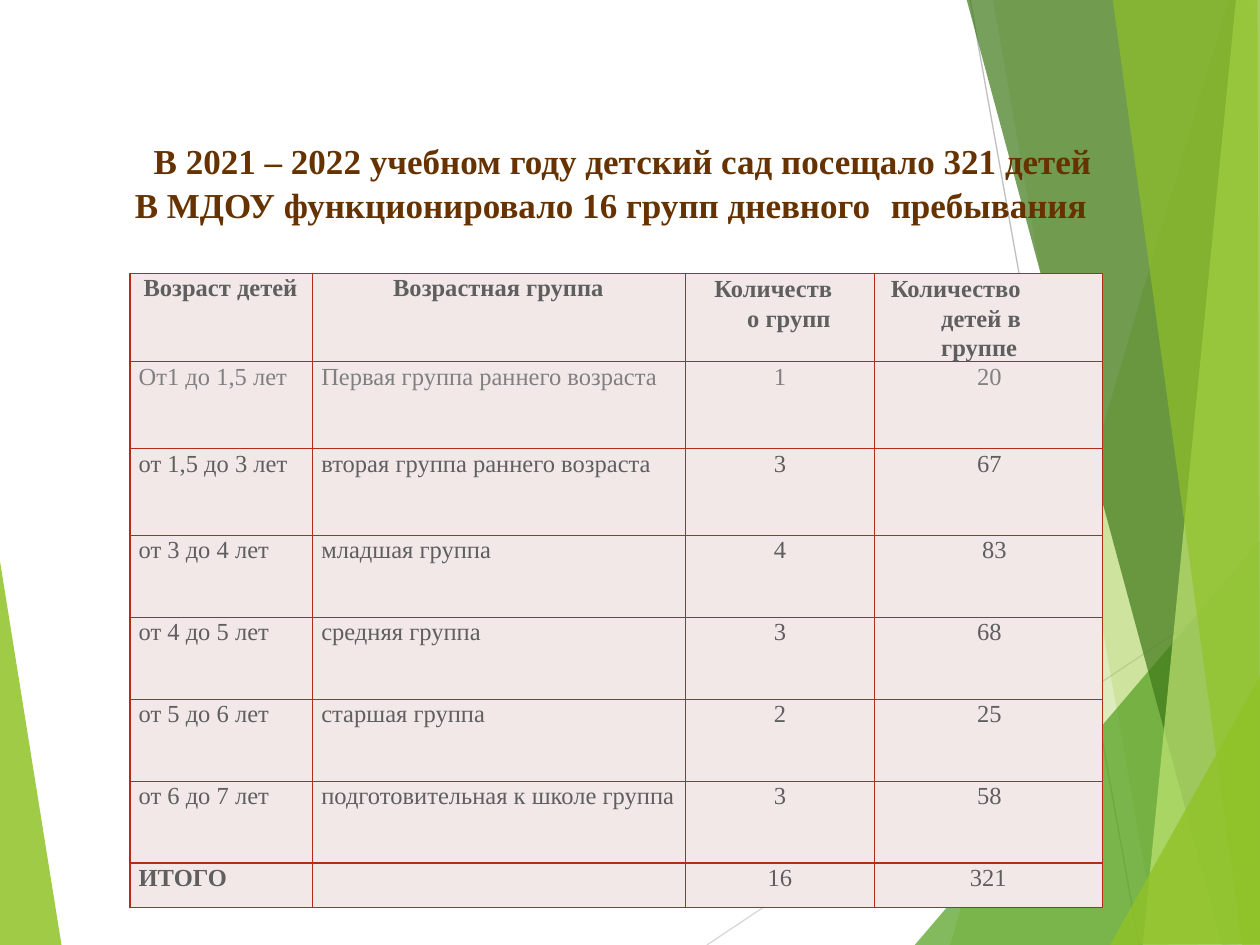
from dataclasses import dataclass

from lxml import etree
from pptx import Presentation
from pptx.dml.color import RGBColor
from pptx.enum.shapes import MSO_CONNECTOR
from pptx.enum.text import MSO_ANCHOR, MSO_AUTO_SIZE, PP_ALIGN as Align
from pptx.oxml.ns import qn
from pptx.util import Inches, Pt


@dataclass(frozen=True)
class Theme:
    font: str = "Times New Roman"
    title_size: int = 20
    table_size: int = 14
    title: str = "663300"
    text: str = "5F5F5F"
    muted: str = "808080"
    cell: str = "F1E8E7"
    border: str = "B32C16"
    lime: str = "90C226"
    green: str = "54A021"
    dark_green: str = "3F7819"
    pale_lime: str = "C0E474"


THEME = Theme()

LEFT_WEDGE = (THEME.lime, 85, [(-0.01, 4.39), (0.49, 7.51), (-0.01, 7.5)])
RAYS = [("D9D9D9", (5.61, 7.5), (10.01, 4.57)),
        ("BFBFBF", (7.7, 0), (9.04, 7.5))]
RIGHT_WEDGES = [
    (THEME.lime, 30, [(9.75, 0), (7.54, 7.5), (10.02, 7.51), (10.01, 0.01)]),
    (THEME.lime, 20, [(7.88, -0.01), (9.19, 7.5), (10.01, 7.5), (10.01, -0.01)]),
    (THEME.green, 72, [(7.26, 7.5), (10, 4.29), (10.01, 7.5)]),
    (THEME.dark_green, 70, [(7.67, -0.01), (9.7, 7.5), (10.01, 7.49), (10.01, -0.01)]),
    (THEME.pale_lime, 70, [(9.81, -0.01), (9.07, 7.5), (10.01, 7.5), (10, -0.01)]),
    (THEME.lime, 65, [(8.83, -0.01), (9.86, 7.5), (10, 7.5), (9.98, -0.01)]),
    (THEME.lime, 80, [(8.81, 7.5), (10.01, 5.35), (10.01, 7.49)]),
]

TITLE_LINES = [
    "В 2021 – 2022 учебном году детский сад посещало 321 детей",
    "В МДОУ функционировало 16 групп дневного\tпребывания",
]

COLUMN_WIDTHS = [1.45, 2.96, 1.5, 1.81]
ROW_HEIGHTS = [0.65, 0.69, 0.69, 0.65, 0.65, 0.65, 0.65, 0.35]
HEADERS = ["Возраст детей", "Возрастная группа", "Количество групп",
           "Количество детей в группе"]
# Left indent, first-line indent, right margin, line spacing, space before
HEADER_LAYOUT = [(0.11, 0, 0, 16.4, 0), (0.64, 0, 0, 16.4, 0),
                 (0.49, -0.26, 0.28, 16.8, 0.1), (0.53, -0.4, 0.5, 16.8, 0.1)]
GROUPS = [
    ("От1 до 1,5 лет", "Первая группа раннего возраста", "1", "20"),
    ("от 1,5 до 3 лет", "вторая группа раннего возраста", "3", "67"),
    ("от 3 до 4 лет", "младшая группа", "4", "83"),
    ("от 4 до 5 лет", "средняя группа", "3", "68"),
    ("от 5 до 6 лет", "старшая группа", "2", "25"),
    ("от 6 до 7 лет", "подготовительная к школе группа", "3", "58"),
    ("ИТОГО", "", "16", "321"),
]
BODY_ALIGN = [Align.LEFT, Align.LEFT, Align.CENTER, Align.RIGHT]


def style_runs(para, size, color, bold):
    for span in para.runs:
        span.font.name = THEME.font
        span.font.size = Pt(size)
        span.font.bold = bold
        span.font.color.rgb = RGBColor.from_string(color)


def indent(para, left, first=0):
    props = para._p.get_or_add_pPr()
    props.set("marL", str(Inches(left)))
    props.set("indent", str(Inches(first)))


def add_wedge(slide, color, opacity, points):
    corners = [(Inches(x), Inches(y)) for x, y in points]
    builder = slide.shapes.build_freeform(*corners[0])
    builder.add_line_segments(corners[1:], close=True)
    wedge = builder.convert_to_shape()
    wedge.shadow.inherit = False
    wedge.line.fill.background()
    wedge.fill.solid()
    wedge.fill.fore_color.rgb = RGBColor.from_string(color)
    paint = wedge._element.spPr.find(qn("a:solidFill"))[0]
    etree.SubElement(paint, qn("a:alpha"), val=str(opacity * 1000))


def add_ray(slide, color, start, end):
    ray = slide.shapes.add_connector(
        MSO_CONNECTOR.STRAIGHT, *map(Inches, start + end))
    ray.line.color.rgb = RGBColor.from_string(color)
    ray.line.width = Pt(0.75)
    etree.SubElement(ray._element.spPr, qn("a:effectLst"))


def add_backdrop(slide):
    add_wedge(slide, *LEFT_WEDGE)
    for ray in RAYS:
        add_ray(slide, *ray)
    for wedge in RIGHT_WEDGES:
        add_wedge(slide, *wedge)


def set_title(slide):
    """Fill the title placeholder and bring it in front of the backdrop."""
    title = slide.shapes.title
    title.left, title.top = Inches(1.06), Inches(1.1)
    title.width, title.height = Inches(7.76), Inches(0.7)
    frame = title.text_frame
    frame.word_wrap = True
    frame.auto_size = MSO_AUTO_SIZE.NONE
    frame.vertical_anchor = MSO_ANCHOR.TOP
    frame.margin_left = frame.margin_right = frame.margin_bottom = 0
    frame.margin_top = Inches(0.01)
    frame.text = "\n".join(TITLE_LINES)
    for para, left in zip(frame.paragraphs, (0.16, 0.01)):
        para.alignment = Align.LEFT
        para.space_before = Pt(1.1)
        indent(para, left)
        style_runs(para, THEME.title_size, THEME.title, True)
    tabs = etree.SubElement(frame.paragraphs[1]._p.get_or_add_pPr(), qn("a:tabLst"))
    etree.SubElement(tabs, qn("a:tab"), pos=str(Inches(6.19)), algn="l")
    title._element.getparent().append(title._element)


def add_borders(cell):
    props = cell._tc.get_or_add_tcPr()
    for position, side in enumerate(("a:lnL", "a:lnR", "a:lnT", "a:lnB")):
        line = etree.Element(qn(side), w=str(Pt(1)))
        fill = etree.SubElement(line, qn("a:solidFill"))
        etree.SubElement(fill, qn("a:srgbClr"), val=THEME.border)
        props.insert(position, line)


def fill_cell(cell, text, color=THEME.text, bold=False, align=Align.LEFT,
              left=0, first=0, right=0, spacing=16.4, before=0):
    cell.margin_left = cell.margin_top = cell.margin_bottom = 0
    cell.margin_right = Inches(right)
    cell.fill.solid()
    cell.fill.fore_color.rgb = RGBColor.from_string(THEME.cell)
    add_borders(cell)
    if not text:
        return
    cell.text_frame.text = text
    para = cell.text_frame.paragraphs[0]
    para.alignment = align
    para.line_spacing = Pt(spacing)
    para.space_before = Pt(before)
    indent(para, left, first)
    style_runs(para, THEME.table_size, color, bold)


def add_group_table(slide):
    table = slide.shapes.add_table(
        len(ROW_HEIGHTS), len(COLUMN_WIDTHS), Inches(1.03), Inches(2.17),
        Inches(sum(COLUMN_WIDTHS)), Inches(sum(ROW_HEIGHTS))).table
    table.first_row = table.horz_banding = False
    for column, width in zip(table.columns, COLUMN_WIDTHS):
        column.width = Inches(width)
    for row, height in zip(table.rows, ROW_HEIGHTS):
        row.height = Inches(height)

    for col, (text, layout) in enumerate(zip(HEADERS, HEADER_LAYOUT)):
        left, first, right, spacing, before = layout
        fill_cell(table.cell(0, col), text, bold=True, left=left, first=first,
                  right=right, spacing=spacing, before=before)
    for row, group in enumerate(GROUPS, start=1):
        color = THEME.muted if row == 1 else THEME.text
        for col, (text, align) in enumerate(zip(group, BODY_ALIGN)):
            count_margin = 0.76 if text in ("83", "321") else 0.8
            fill_cell(table.cell(row, col), text, color, text == "ИТОГО", align,
                      left=0.07 if align == Align.LEFT else 0,
                      right=count_margin if align == Align.RIGHT else 0)


def main():
    deck = Presentation()
    deck.slide_width, deck.slide_height = Inches(10), Inches(7.5)
    page = deck.slides.add_slide(deck.slide_layouts[5])
    add_backdrop(page)
    set_title(page)
    add_group_table(page)
    deck.save("out.pptx")


if __name__ == "__main__":
    main()
